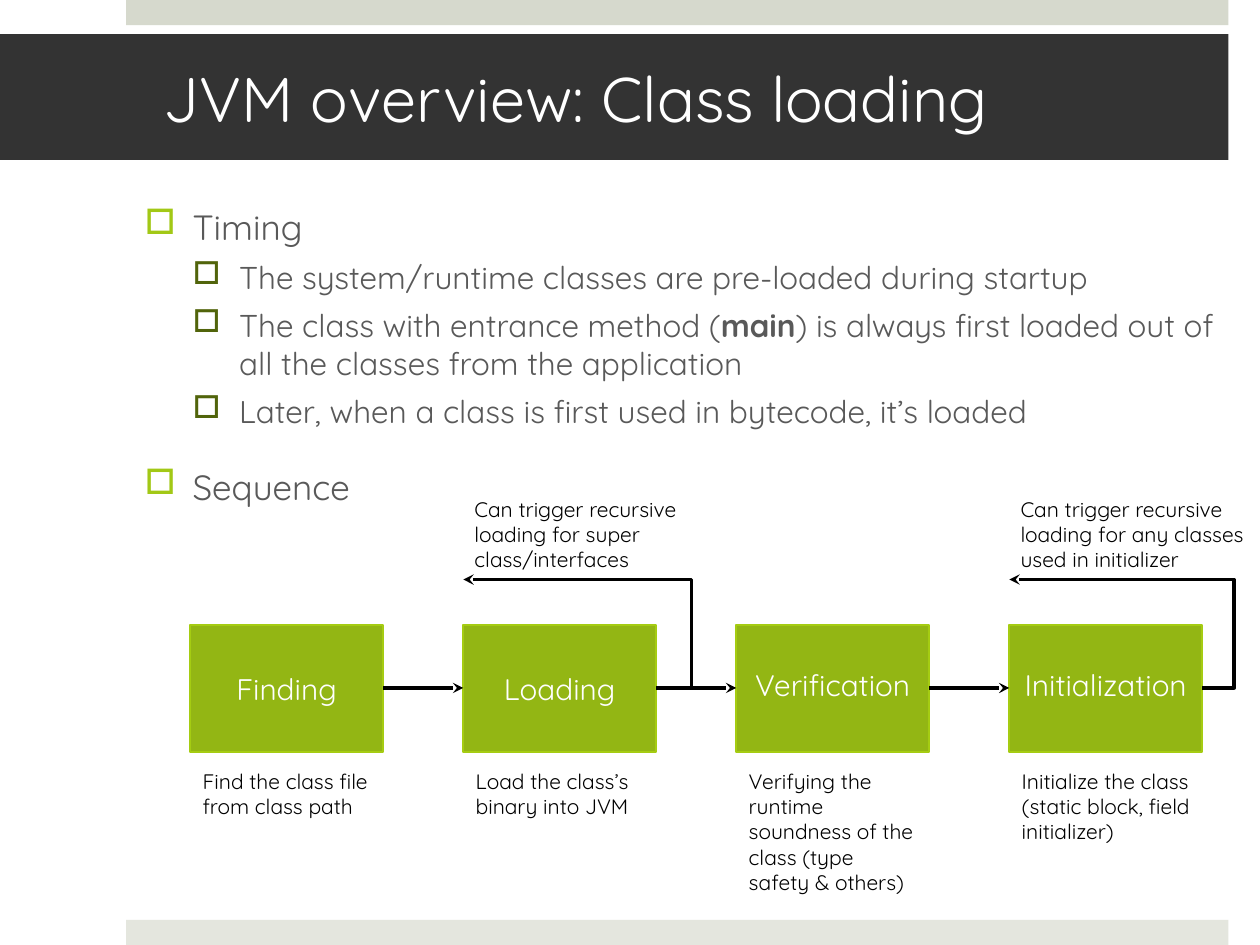
from lxml.etree import SubElement
from pptx import Presentation
from pptx.dml.color import RGBColor
from pptx.enum.shapes import MSO_CONNECTOR as Link, MSO_SHAPE as Shape
from pptx.enum.text import MSO_ANCHOR as Anchor, MSO_AUTO_SIZE as AutoSize, PP_ALIGN as Align
from pptx.oxml.ns import qn
from pptx.util import Inches, Pt

FONT = "Quicksand"
COLORS = {
    "top_bar": "D6D9CD", "bottom_bar": "E4E6DE", "title_band": "333333",
    "step": "93B614", "step_edge": "A5CC12", "white": "FFFFFF",
    "black": "000000", "body": "595959",
    "bullet": "A2C816", "sub_bullet": "51640B",
}
STEP_LEFT, STEP_PITCH = 1.51, 2.167
STEP_TOP, STEP_WIDTH, STEP_HEIGHT = 4.96, 1.53, 1.01
ARROW_Y, LOOP_Y = 5.46, 4.6

# name, upward shift of the name, caption, caption height
STEPS = [
    ("Finding", 0, "Find the class file from class path", 0.5),
    ("Loading", 0, "Load the class’s binary into JVM", 0.5),
    ("Verification", 0.03,
     "Verifying the runtime soundness of the class (type safety & others)", 1.11),
    ("Initialization", 0.03,
     "Initialize the class (static block, field initializer)", 0.91),
]
# step index, bend position, note
LOOPS = [
    (1, -0.185, "Can trigger recursive loading for super class/interfaces"),
    (3, -0.167, "Can trigger recursive loading for any classes used in initializer"),
]
# level, spans of (text, bold)
OUTLINE = [
    (0, [("Timing", False)]),
    (1, [("The system/runtime classes are pre-loaded during startup", False)]),
    (1, [("The class with entrance method (", False), ("main", True),
         (") is always first loaded out of all the classes from the application", False)]),
    (1, [("Later, when a class is first used in bytecode, it’s loaded", False)]),
    (0, [("Sequence", False)]),
]


def rgb(name):
    return RGBColor.from_string(COLORS[name])


def step_x(index):
    return STEP_LEFT + STEP_PITCH * index


def write(para, text, size=12, color="black", bold=False, align=Align.LEFT):
    para.alignment = align
    span = para.add_run()
    span.text = text
    font = span.font
    font.name, font.size, font.bold = FONT, Pt(size), bold
    font.color.rgb = rgb(color)


def add_block(page, kind, left, top, width, height, fill, edge=None):
    block = page.shapes.add_shape(
        kind, Inches(left), Inches(top), Inches(width), Inches(height))
    block.shadow.inherit = False
    block.fill.solid()
    block.fill.fore_color.rgb = rgb(fill)
    if edge:
        block.line.color.rgb = rgb(edge)
        block.line.width = Pt(1)
    else:
        block.line.fill.background()
    return block


def add_text_box(page, left, top, width, height):
    box = page.shapes.add_textbox(
        Inches(left), Inches(top), Inches(width), Inches(height))
    box.text_frame.word_wrap = True
    return box.text_frame


def add_arrow(page, start, end, bend=None):
    """Draw a straight arrow, or an elbow one when a bend position is given."""
    kind = Link.STRAIGHT if bend is None else Link.ELBOW
    arrow = page.shapes.add_connector(kind, *map(Inches, start + end))
    arrow.line.color.rgb = rgb("black")
    arrow.line.width = Pt(2)
    props = arrow.element.spPr
    SubElement(props.find(qn("a:ln")), qn("a:tailEnd"), type="stealth")
    SubElement(props, qn("a:effectLst"))
    if bend is not None:
        SubElement(props.find(".//" + qn("a:avLst")), qn("a:gd"),
                   name="adj1", fmla=f"val {round(bend * 100000)}")


def set_bullet(para, level):
    margin, hang = ((0.38, 0.38), (0.75, 0.37))[level]
    props = para._p.get_or_add_pPr()
    props.set("marL", str(Inches(margin)))
    props.set("indent", str(-Inches(hang)))
    color = SubElement(props, qn("a:buClr"))
    SubElement(color, qn("a:srgbClr"), val=COLORS[("bullet", "sub_bullet")[level]])
    SubElement(props, qn("a:buChar"), char="□")


def add_title(page, text):
    title = page.shapes.title
    title.left, title.top = Inches(0), Inches(0.27)
    title.width, title.height = Inches(9.75), Inches(1)
    title.fill.solid()
    title.fill.fore_color.rgb = rgb("title_band")
    frame = title.text_frame
    frame.auto_size = AutoSize.NONE
    frame.vertical_anchor = Anchor.MIDDLE
    frame.margin_left, frame.margin_right = Inches(1.3), Inches(0.3)
    write(frame.paragraphs[0], text, size=36, color="white")


def add_outline(page):
    frame = add_text_box(page, 1.05, 1.58, 8.7, 2.7)
    for number, (level, spans) in enumerate(OUTLINE):
        para = frame.add_paragraph() if number else frame.paragraphs[0]
        para.level = level
        para.space_before = Pt((20, 6)[level])
        set_bullet(para, level)
        for text, bold in spans:
            write(para, text, size=(20, 18)[level], color="body", bold=bold)


def add_step(page, index, name, lift, caption, caption_height):
    left = step_x(index)
    block = add_block(page, Shape.FLOWCHART_PROCESS, left, STEP_TOP,
                      STEP_WIDTH, STEP_HEIGHT, "step", "step_edge")
    frame = block.text_frame
    frame.vertical_anchor = Anchor.MIDDLE
    frame.margin_bottom = Inches(0.05 + 2 * lift)
    write(frame.paragraphs[0], name, size=17, color="white", align=Align.CENTER)
    if index:
        add_arrow(page, (step_x(index - 1) + STEP_WIDTH, ARROW_Y), (left, ARROW_Y))
    frame = add_text_box(page, left, 6.05, 1.54, caption_height)
    write(frame.paragraphs[0], caption)


def add_loop(page, index, bend, note):
    left = step_x(index)
    add_arrow(page, (left + STEP_WIDTH, ARROW_Y), (left, LOOP_Y), bend)
    frame = add_text_box(page, left - 0.01, 3.89, 2.18, 0.71)
    write(frame.paragraphs[0], note)


def main():
    deck = Presentation()
    deck.slide_width, deck.slide_height = Inches(10), Inches(7.5)
    page = deck.slides.add_slide(deck.slide_layouts[5])
    add_block(page, Shape.RECTANGLE, 1, 0, 8.75, 0.2, "top_bar")
    add_block(page, Shape.RECTANGLE, 1, 7.3, 8.75, 0.2, "bottom_bar")
    add_title(page, "JVM overview: Class loading")
    add_outline(page)
    for index, step in enumerate(STEPS):
        add_step(page, index, *step)
    for loop in LOOPS:
        add_loop(page, *loop)
    deck.save("out.pptx")


if __name__ == "__main__":
    main()
